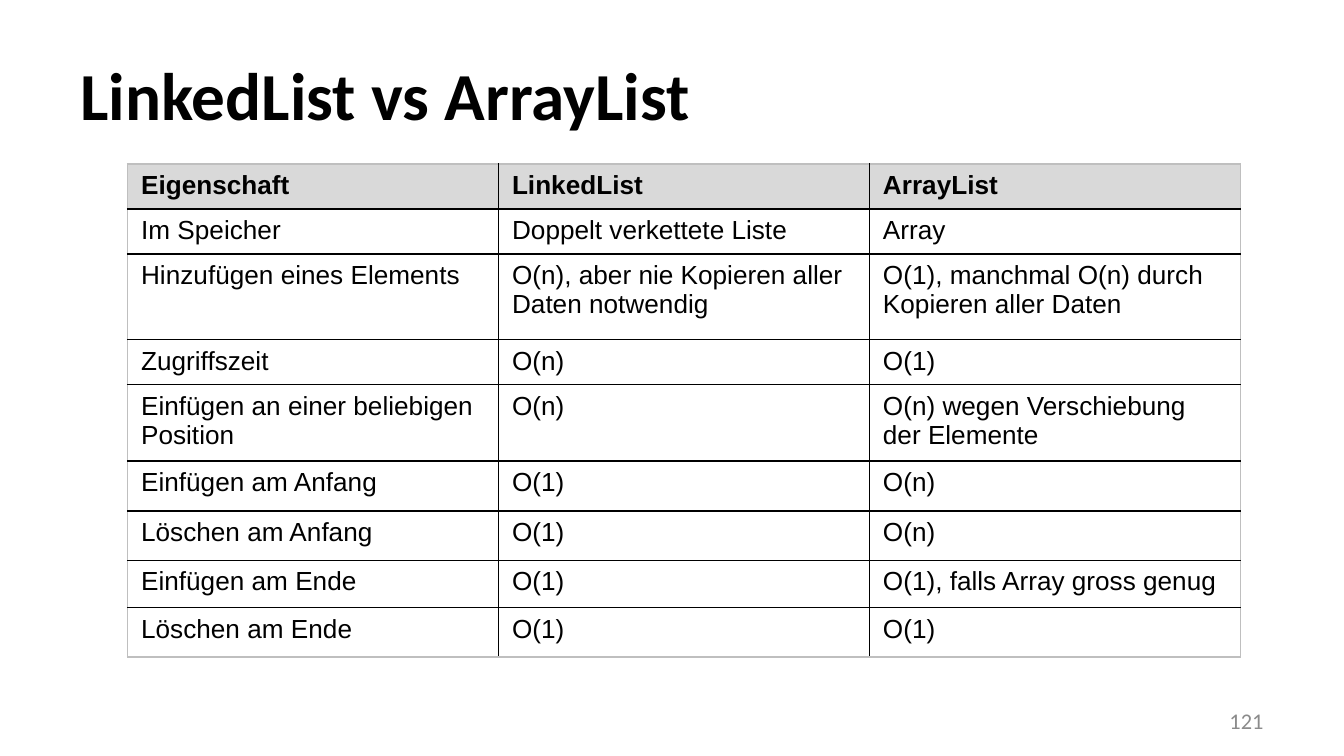
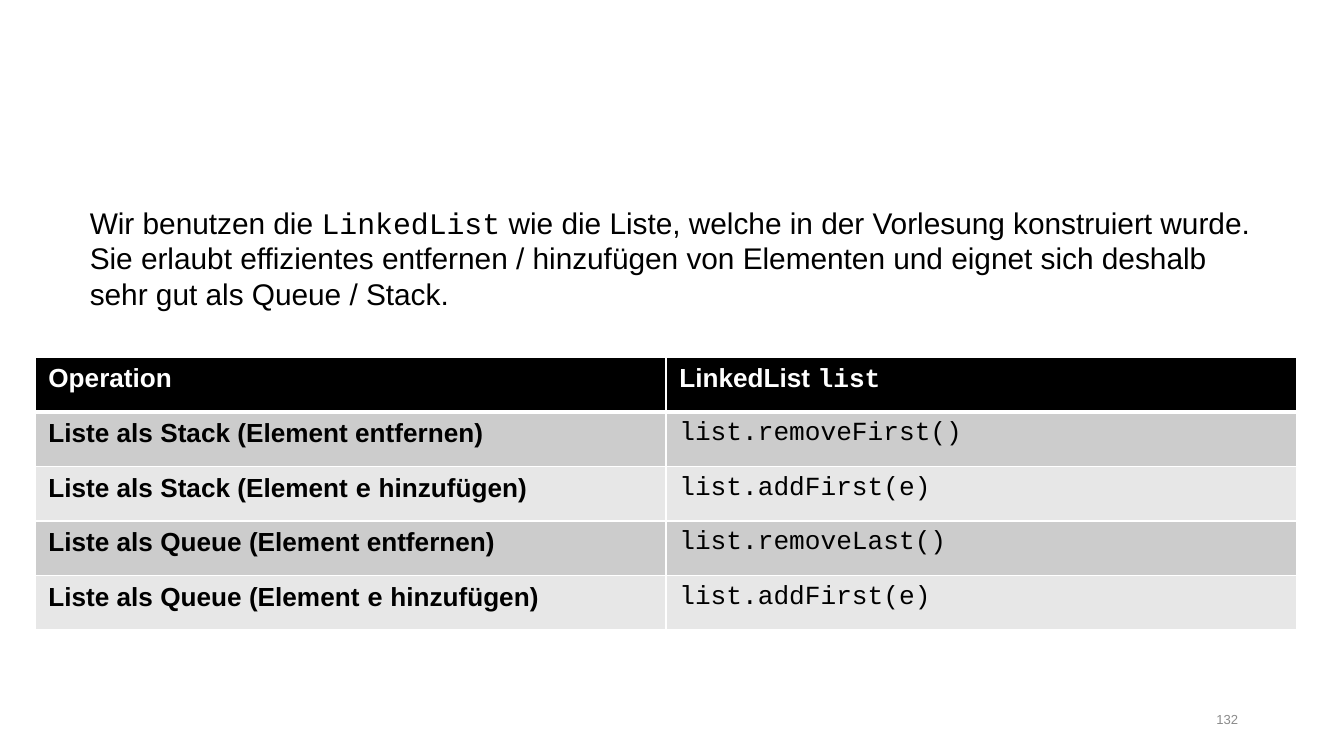
from pptx import Presentation
from pptx.dml.color import RGBColor
from pptx.enum.text import MSO_ANCHOR, MSO_AUTO_SIZE, PP_ALIGN
from pptx.oxml.ns import qn
from pptx.util import Inches, Pt
from lxml.etree import SubElement

BLACK = RGBColor(0x00, 0x00, 0x00)
WHITE = RGBColor(0xFF, 0xFF, 0xFF)
HEADER_GREY = RGBColor(0xD9, 0xD9, 0xD9)
FRAME_GREY = RGBColor(0xBF, 0xBF, 0xBF)
BAND_DARK = RGBColor(0xCC, 0xCC, 0xCC)
BAND_LIGHT = RGBColor(0xE7, 0xE7, 0xE7)
NUMBER_GREY = RGBColor(0x8B, 0x8B, 0x8B)

SANS, MONO, HEADING = "Arial", "Courier New", "Calibri"
TITLE_ONLY, BLANK = 5, 6


class Deck:
    """Holds the shared style and the current slide."""

    def __init__(self):
        self.prs = Presentation()
        self.prs.slide_width = Inches(10)
        self.prs.slide_height = Inches(10 * 9 / 16)
        self.s = None

    def slide(self, layout):
        self.s = self.prs.slides.add_slide(self.prs.slide_layouts[layout])

    def runs(self, p, parts, size, color=BLACK, bold=False):
        """Each part is a (text, font) pair."""
        for text, font in parts:
            r = p.add_run()
            r.text = text
            r.font.name = font
            r.font.size = Pt(size)
            r.font.bold = bold
            r.font.color.rgb = color

    def title(self, text):
        sp = self.s.shapes.title
        sp.left, sp.top = Inches(0.5), Inches(0.23)
        sp.width, sp.height = Inches(9), Inches(0.94)
        tf = sp.text_frame
        tf.auto_size = MSO_AUTO_SIZE.NONE
        tf.vertical_anchor = MSO_ANCHOR.MIDDLE
        p = tf.paragraphs[0]
        p.alignment = PP_ALIGN.LEFT
        self.runs(p, [(text, HEADING)], 36, bold=True)

    def text(self, x, y, w, h, parts, size, color=BLACK):
        sp = self.s.shapes.add_textbox(Inches(x), Inches(y), Inches(w), Inches(h))
        tf = sp.text_frame
        tf.word_wrap = True
        self.runs(tf.paragraphs[0], parts, size, color)
        return tf

    def number(self, x, w, text, font, size):
        tf = self.text(x, 5.21, w, 0.3, [(text, font)], size, NUMBER_GREY)
        tf.vertical_anchor = MSO_ANCHOR.MIDDLE
        p = tf.paragraphs[0]
        p.alignment = PP_ALIGN.RIGHT
        return p

    def table(self, x, y, w, heights, n_cols):
        shape = self.s.shapes.add_table(len(heights), n_cols, Inches(x), Inches(y),
                                        Inches(w), Inches(sum(heights)))
        table = shape.table
        table.first_row = table.horz_banding = False
        for row, height in zip(table.rows, heights):
            row.height = Inches(height)
        return table

    def cell(self, cell, parts, borders, fill=None, color=BLACK, bold=False):
        """Borders are (color, points) pairs for left, right, top and bottom."""
        tcPr = cell._tc.get_or_add_tcPr()
        for side, (line_color, points) in zip("LRTB", borders):
            ln = SubElement(tcPr, qn(f"a:ln{side}"), w=str(Pt(points)))
            solid = SubElement(ln, qn("a:solidFill"))
            SubElement(solid, qn("a:srgbClr"), val=str(line_color))
        if fill is None:
            cell.fill.background()
        else:
            cell.fill.solid()
            cell.fill.fore_color.rgb = fill
        self.runs(cell.text_frame.paragraphs[0], parts, 14, color, bold)


def comparison(deck):
    deck.slide(TITLE_ONLY)
    deck.title("LinkedList vs ArrayList")
    deck.number(7.17, 2.33, "121", HEADING, 12)

    rows = [
        ("Eigenschaft", "LinkedList", "ArrayList"),
        ("Im Speicher", "Doppelt verkettete Liste", "Array"),
        ("Hinzufügen eines Elements", "O(n), aber nie Kopieren aller Daten notwendig",
         "O(1), manchmal O(n) durch Kopieren aller Daten"),
        ("Zugriffszeit", "O(n)", "O(1)"),
        ("Einfügen an einer beliebigen Position", "O(n)",
         "O(n) wegen Verschiebung der Elemente"),
        ("Einfügen am Anfang", "O(1)", "O(n)"),
        ("Löschen am Anfang", "O(1)", "O(n)"),
        ("Einfügen am Ende", "O(1)", "O(1), falls Array gross genug"),
        ("Löschen am Ende", "O(1)", "O(1)"),
    ]
    heights = [0.33, 0.33, 0.64, 0.33, 0.57, 0.37, 0.37, 0.35, 0.37]
    table = deck.table(0.95, 1.22, 8.28, heights, 3)
    for i, row in enumerate(rows):
        for j, text in enumerate(row):
            # Grey frame outside, black rules inside
            outer = (j == 0, j == len(row) - 1, i == 0, i == len(rows) - 1)
            borders = [(FRAME_GREY if edge else BLACK, 1) for edge in outer]
            deck.cell(table.cell(i, j), [(text, SANS)], borders,
                      HEADER_GREY if i == 0 else None, bold=i == 0)


def stack_and_queue(deck):
    deck.slide(BLANK)
    p = deck.number(7.06, 2.25, "132", SANS, 7)
    p.line_spacing = 0.9
    p.space_after = Pt(6)

    # Operations table
    add = [("Element ", SANS), ("e", MONO), (" hinzufügen)", SANS)]
    remove = [("Element entfernen)", SANS)]
    rows = [([("Operation", SANS)], [("LinkedList ", SANS), ("list", MONO)])]
    for kind, action, call in [("Stack", remove, "removeFirst()"),
                               ("Stack", add, "addFirst(e)"),
                               ("Queue", remove, "removeLast()"),
                               ("Queue", add, "addFirst(e)")]:
        (first, font), *rest = action
        rows.append(([(f"Liste als {kind} ({first}", font), *rest],
                     [(f"list.{call}", MONO)]))

    table = deck.table(0.26, 2.66, 9.39, [2.03 / len(rows)] * len(rows), 2)
    thin, thick = (WHITE, 1), (WHITE, 3)
    for i, row in enumerate(rows):
        header = i == 0
        fill = BLACK if header else (BAND_LIGHT, BAND_DARK)[i % 2]
        borders = [thin, thin, thick if i == 1 else thin, thick if header else thin]
        for j, parts in enumerate(row):
            deck.cell(table.cell(i, j), parts, borders, fill,
                      WHITE if header else BLACK, bold=header or j == 0)

    # Introduction
    tf = deck.text(0.57, 1.47, 8.87, 0.91, [
        ("Wir benutzen die ", SANS),
        ("LinkedList", MONO),
        (" wie die Liste, welche in der Vorlesung konstruiert wurde. Sie erlaubt "
         "effizientes entfernen / hinzufügen von Elementen und eignet sich deshalb "
         "sehr gut als Queue / Stack.", SANS),
    ], 16)
    tf.auto_size = MSO_AUTO_SIZE.SHAPE_TO_FIT_TEXT


def main():
    deck = Deck()
    comparison(deck)
    stack_and_queue(deck)
    deck.prs.save("out.pptx")


if __name__ == "__main__":
    main()
